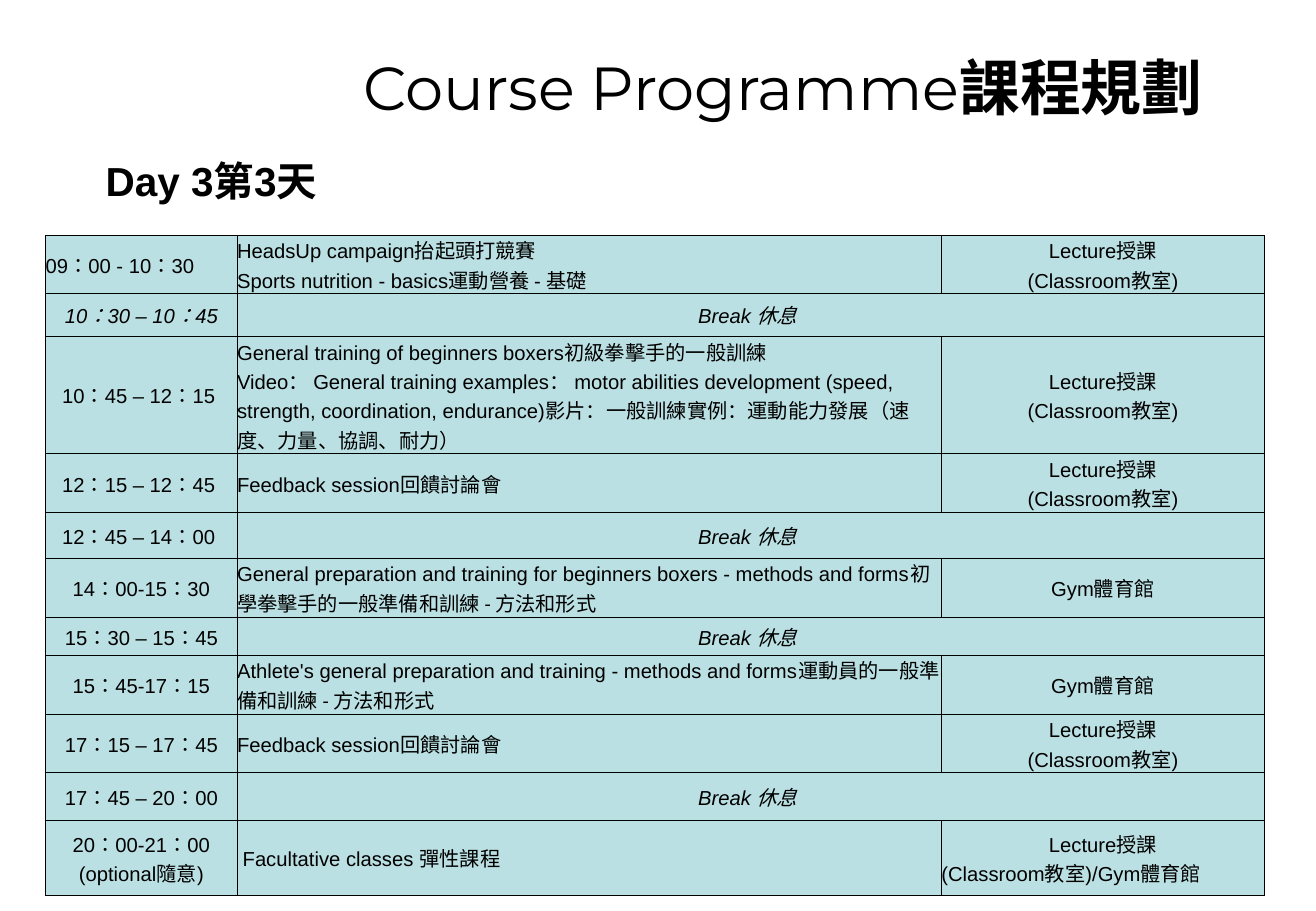
from lxml.etree import SubElement
from pptx import Presentation
from pptx.dml.color import RGBColor
from pptx.enum.text import MSO_ANCHOR, PP_ALIGN
from pptx.oxml.ns import qn
from pptx.util import Pt

BLACK = "000000"
PALE_TEAL = "BBE0E3"
CHINESE_FONT = "Noto Sans CJK TC"
LEFT, CENTER = PP_ALIGN.LEFT, PP_ALIGN.CENTER

COLUMN_WIDTHS = [113.5, 417.5, 191.5]
LECTURE = ["Lecture授課", "(Classroom教室)"]
GYM = ["Gym體育館"]
FEEDBACK = ["Feedback session回饋討論會"]
BREAK = [" Break 休息"]

SCHEDULE = [
    (34.5, ["09：00 - 10：30"],
     ["HeadsUp campaign抬起頭打競賽",
      "Sports nutrition - basics運動營養 - 基礎"], LECTURE),
    (25.5, ["10：30 – 10：45"], BREAK, None),
    (69.5, ["10：45 – 12：15 "],
     [["General training of beginners boxers", ("初級拳擊手的一般訓練", "Calibri")],
      ["Video： General training examples： motor abilities development "
       "(speed, strength, coordination, endurance)影片：",
       ("一般訓練實例：運動能力發展（速度", "Calibri"), ("、", CHINESE_FONT),
       ("力量", "Calibri"), ("、", CHINESE_FONT),
       ("協調", "Calibri"), ("、", CHINESE_FONT), ("耐力）", "Calibri")]], LECTURE),
    (35, ["12：15 – 12：45 "], FEEDBACK, LECTURE),
    (27, ["12：45 – 14：00 "], BREAK, None),
    (35, ["14：00-15：30"],
     [["General preparation and training for beginners boxers - methods and forms",
       ("初學拳擊手的一般準備和訓練 - 方法和形式", "Calibri")]], GYM),
    (22.5, ["15：30 – 15：45"], BREAK, None),
    (35, ["15：45-17：15"],
     [["Athlete's general preparation and training - methods and forms",
       ("運動員的一般準備和訓練 - 方法和形式", "Calibri")]], GYM),
    (34.5, ["17：15 – 17：45"], FEEDBACK, LECTURE),
    (28.5, ["17：45 – 20：00"], BREAK, None),
    (44.5, ["20：00-21：00", "(optional隨意)"],
     [" Facultative classes 彈性課程"], ["Lecture授課", "(Classroom教室)/Gym體育館"]),
]


def color(value):
    return RGBColor.from_string(value)


def add_span(para, text, font="Arial", size=12, bold=False, italic=False):
    span = para.add_run()
    span.text = text
    span.font.name = font
    span.font.size = Pt(size)
    span.font.bold = bold
    span.font.italic = italic
    span.font.color.rgb = color(BLACK)
    SubElement(span.font._element, qn("a:ea"), typeface=CHINESE_FONT)


def set_margins(target, margin):
    target.margin_left = target.margin_right = Pt(margin)
    target.margin_top = target.margin_bottom = Pt(margin)


def add_title(page):
    title = page.shapes.title
    title.left, title.top, title.width, title.height = Pt(163.5), Pt(25.5), Pt(601), Pt(51)
    frame = title.text_frame
    set_margins(frame, 3)
    frame.vertical_anchor = MSO_ANCHOR.MIDDLE
    para = frame.paragraphs[0]
    para.alignment = CENTER
    add_span(para, "Course Programme", font="Montserrat", size=36)
    add_span(para, "課程規劃", font="Montserrat", size=36, bold=True)


def add_day_heading(page):
    box = page.shapes.add_textbox(Pt(55.5), Pt(89), Pt(702), Pt(44))
    box.text_frame.word_wrap = True
    add_span(box.text_frame.paragraphs[0], "Day 3第3天", size=24, bold=True)


def format_cell(cell):
    properties = cell._tc.get_or_add_tcPr()
    for side in ("lnL", "lnR", "lnT", "lnB"):
        line = SubElement(properties, qn(f"a:{side}"), w=str(Pt(0.5)))
        fill = SubElement(line, qn("a:solidFill"))
        SubElement(fill, qn("a:srgbClr"), val=BLACK)
    cell.fill.solid()
    cell.fill.fore_color.rgb = color(PALE_TEAL)
    cell.vertical_anchor = MSO_ANCHOR.MIDDLE
    set_margins(cell, 0)


def fill_cell(cell, lines, align=CENTER, italic=False):
    frame = cell.text_frame
    for index, line in enumerate(lines):
        para = frame.add_paragraph() if index else frame.paragraphs[0]
        para.alignment = align
        para._p.get_or_add_pPr().set("hangingPunct", "0")
        for part in [line] if isinstance(line, str) else line:
            text, font = (part, "Arial") if isinstance(part, str) else part
            add_span(para, text, font=font, italic=italic)


def add_schedule(page):
    height = sum(row[0] for row in SCHEDULE)
    table = page.shapes.add_table(len(SCHEDULE), len(COLUMN_WIDTHS), Pt(27), Pt(139.5),
                                  Pt(sum(COLUMN_WIDTHS)), Pt(height)).table
    table.first_row = table.horz_banding = False
    for column, width in zip(table.columns, COLUMN_WIDTHS):
        column.width = Pt(width)
    for index, (height, time, topic, place) in enumerate(SCHEDULE):
        table.rows[index].height = Pt(height)
        cells = [table.cell(index, column) for column in range(len(COLUMN_WIDTHS))]
        for cell in cells:
            format_cell(cell)
        fill_cell(cells[0], time, italic=index == 1)
        if place:
            fill_cell(cells[1], topic, align=LEFT)
            fill_cell(cells[2], place)
        else:
            cells[1].merge(cells[2])
            cells[1].margin_right = Pt(7)
            fill_cell(cells[1], topic, italic=True)
    table.cell(0, 0).text_frame.paragraphs[0].alignment = LEFT
    table.cell(len(SCHEDULE) - 1, 2).text_frame.paragraphs[1].alignment = LEFT


def main():
    deck = Presentation()
    deck.slide_width, deck.slide_height = Pt(780), Pt(540)
    page = deck.slides.add_slide(deck.slide_layouts[5])
    add_title(page)
    add_day_heading(page)
    add_schedule(page)
    deck.save("out.pptx")


if __name__ == "__main__":
    main()
